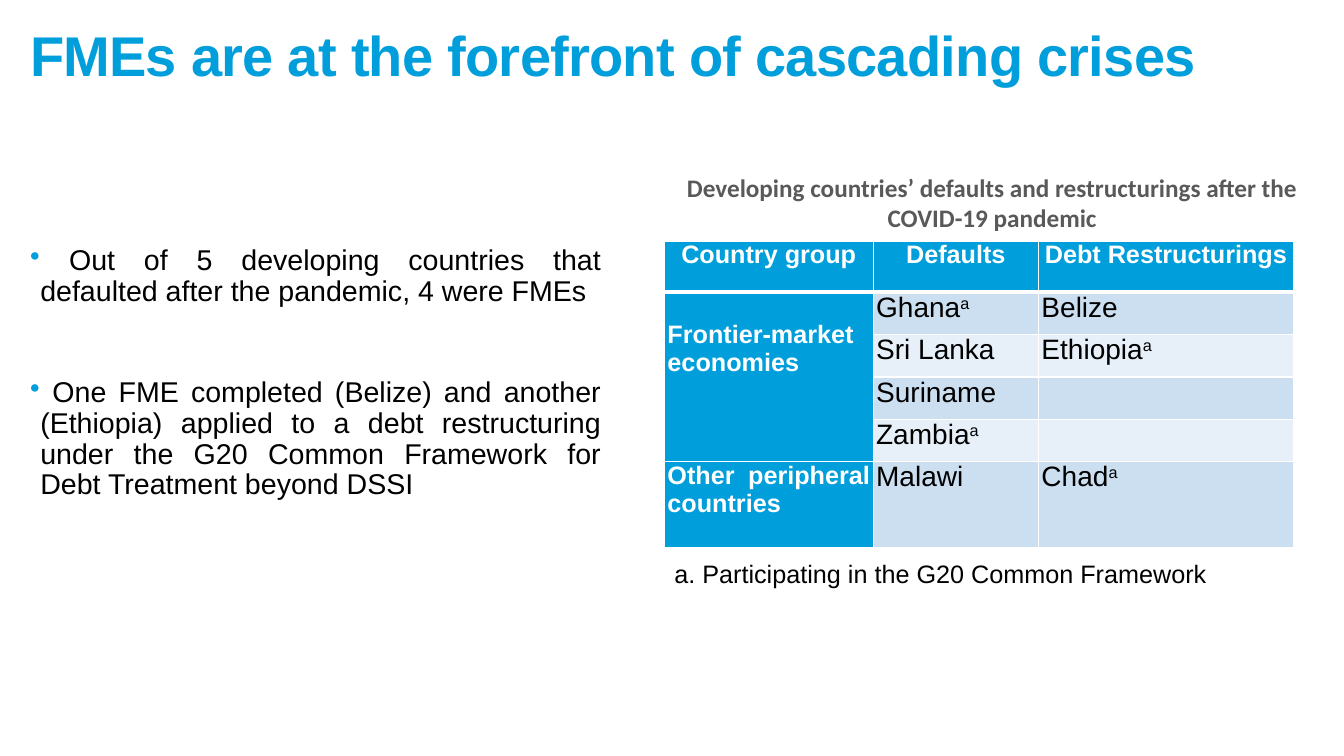
from lxml.etree import SubElement
from pptx import Presentation
from pptx.dml.color import RGBColor
from pptx.enum.text import PP_ALIGN as Align
from pptx.oxml.ns import qn
from pptx.util import Inches, Pt

COLORS = {
    "blue": "009EDB",
    "band_dark": "CCDFF1",
    "band_light": "E7F0F8",
    "white": "FFFFFF",
    "black": "000000",
    "grey": "595959",
}


class SlideBuilder:
    def __init__(self, slide, font="Arial"):
        self.slide = slide
        self.font = font

    def style(self, paragraph, size, color, bold=False, align=Align.LEFT, font=None):
        paragraph.alignment = align
        for run in paragraph.runs:
            run.font.name = font or self.font
            run.font.size = Pt(size)
            run.font.bold = bold
            run.font.color.rgb = RGBColor.from_string(COLORS[color])

    def text(self, box, lines, size, color, **style):
        frame = self.slide.shapes.add_textbox(*map(Inches, box)).text_frame
        frame.word_wrap = True
        frame.text = "\n".join(lines)
        for paragraph in frame.paragraphs:
            self.style(paragraph, size, color, **style)
        return frame

    def bullets(self, box, lines, size, gap):
        frame = self.text(box, lines, size, "black", align=Align.JUSTIFY)
        frame.margin_left = frame.margin_right = 0
        for index, paragraph in enumerate(frame.paragraphs):
            props = paragraph._p.get_or_add_pPr()
            props.set("marL", str(Inches(0.1)))
            props.set("indent", str(-Inches(0.1)))
            bullet_color = SubElement(props, qn("a:buClr"))
            SubElement(bullet_color, qn("a:srgbClr"), val=COLORS["blue"])
            SubElement(props, qn("a:buChar"), char="•")
            paragraph.line_spacing = 0.9
            paragraph.space_after = Pt(2)
            if index:
                paragraph.space_before = Pt(gap)

    def table(self, box, widths, heights):
        grid = self.slide.shapes.add_table(
            len(heights), len(widths), *map(Inches, box)).table
        for column, width in zip(grid.columns, widths):
            column.width = Inches(width)
        for row, height in zip(grid.rows, heights):
            row.height = Inches(height)
        return grid

    def cell(self, cell, text, fill, size, color, bottom=1, **style):
        """Fill one cell; letters after ^ become superscript."""
        cell.margin_left = cell.margin_right = Inches(0.03)
        cell.margin_top = cell.margin_bottom = 0
        props = cell._tc.get_or_add_tcPr()
        for side, width in zip("LRTB", (1, 1, 1, bottom)):
            line = SubElement(props, qn(f"a:ln{side}"), w=str(Pt(width)))
            paint = SubElement(line, qn("a:solidFill"))
            SubElement(paint, qn("a:srgbClr"), val=COLORS["white"])
        cell.fill.solid()
        cell.fill.fore_color.rgb = RGBColor.from_string(COLORS[fill])
        if not text:
            return
        word, _, note = text.partition("^")
        paragraph = cell.text_frame.paragraphs[0]
        paragraph.text = word
        if note:
            mark = paragraph.add_run()
            mark.text = note
            mark._r.get_or_add_rPr().set("baseline", "30000")
        self.style(paragraph, size, color, **style)


def main():
    prs = Presentation()
    prs.slide_width, prs.slide_height = Inches(13.33), Inches(7.5)
    page = SlideBuilder(prs.slides.add_slide(prs.slide_layouts[6]))

    # Title
    title = page.text((0.2, 0.09, 12.4, 1.52),
                      ["FMEs are at the forefront of cascading crises"],
                      40, "blue", bold=True)
    title.paragraphs[0].line_spacing = 1.1
    title.paragraphs[0].runs[0]._r.get_or_add_rPr().set("spc", "-50")

    # Key findings
    page.bullets((0.3, 2.39, 5.66, 2.75), [
        " Out of 5 developing countries that defaulted after the pandemic, 4 were FMEs",
        " One FME completed (Belize) and another (Ethiopia) applied to a debt "
        "restructuring under the G20 Common Framework for Debt Treatment beyond DSSI",
    ], 20.4, gap=48)

    # Table caption
    page.text((6.67, 1.66, 6.34, 0.71),
              ["Developing countries’ defaults and restructurings after the "
               "COVID-19 pandemic"],
              18, "grey", bold=True, align=Align.CENTER, font="Calibri")

    # Defaults and restructurings
    headings = ["Country group", "Defaults", "Debt Restructurings"]
    countries = [
        ("Frontier-market economies", "Ghana^a", "Belize"),
        ("", "Sri Lanka", "Ethiopia^a"),
        ("", "Suriname", ""),
        ("", "Zambia^a", ""),
        ("Other peripheral countries", "Malawi", "Chad^a"),
    ]
    grid = page.table((6.59, 2.39, 6.24, 3.04), [2.07, 1.64, 2.53],
                      [0.51] + [0.42] * 4 + [0.85])
    for col, heading in enumerate(headings):
        page.cell(grid.cell(0, col), heading, "blue", 18, "white",
                  bottom=3, bold=True, align=Align.CENTER)
    for row, (group, *names) in enumerate(countries, 1):
        page.cell(grid.cell(row, 0), group, "blue", 18, "white",
                  bold=True, align=Align.JUSTIFY)
        band = "band_dark" if row % 2 else "band_light"
        for col, name in enumerate(names, 1):
            page.cell(grid.cell(row, col), name, band, 20, "black",
                      align=Align.JUSTIFY)
    frontier = grid.cell(1, 0)
    frontier.merge(grid.cell(4, 0))
    frontier.margin_top = Inches(0.28)

    # Table note
    page.text((6.59, 5.49, 6.74, 0.4),
              ["a. Participating in the G20 Common Framework"], 18, "black")

    prs.save("out.pptx")


if __name__ == "__main__":
    main()
